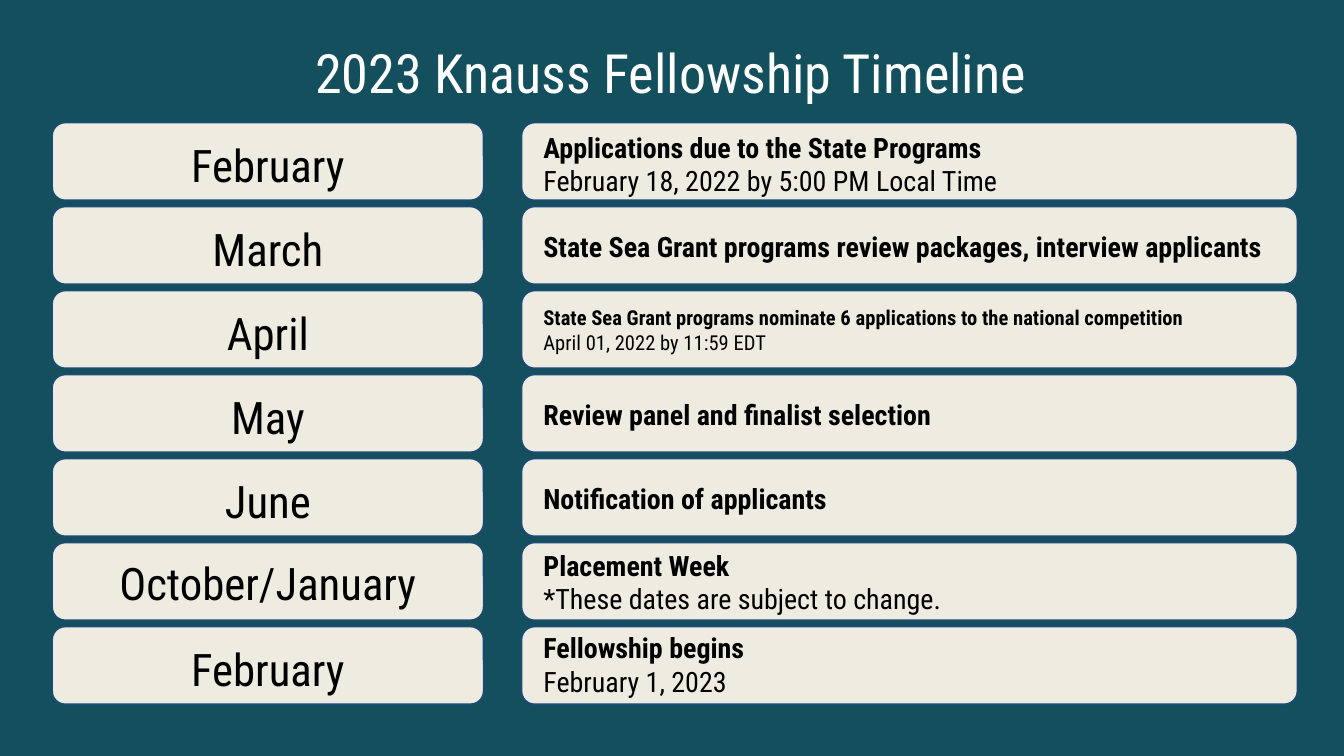
from pptx import Presentation
from pptx.dml.color import RGBColor
from pptx.enum.shapes import MSO_SHAPE
from pptx.enum.text import MSO_ANCHOR, MSO_AUTO_SIZE, PP_ALIGN
from pptx.util import Pt

ROUNDED = MSO_SHAPE.ROUNDED_RECTANGLE
TOP, MIDDLE = MSO_ANCHOR.TOP, MSO_ANCHOR.MIDDLE
LEFT, CENTER = PP_ALIGN.LEFT, PP_ALIGN.CENTER
NO_FIT = MSO_AUTO_SIZE.NONE

COLORS = {"background": "134F5C", "card": "EEECE1", "border": "1F497D",
          "title": "FFFFFF", "text": "000000"}
FONT = "Roboto Condensed"

# Row grid, in points
FIRST_TOP, ROW_STEP, CARD_HEIGHT = 65.75, 45, 41.5
MONTH_LEFT, MONTH_WIDTH = 28, 231
DETAIL_LEFT, DETAIL_WIDTH = 279.5, 415.5

# Month, detail lines (the first is bold), detail size, month and detail nudge
ROWS = [
    ("February", ["Applications due to the State Programs",
                  "February 18, 2022 by 5:00 PM Local Time"], 15, 0, 1),
    ("March", ["State Sea Grant programs review packages, interview applicants"],
     15, 0, 0),
    ("April", ["State Sea Grant programs nominate 6 applications to the national competition",
               "April 01, 2022 by 11:59 EDT"], 11, 0, 0),
    ("May", ["Review panel and finalist selection"], 15, 0, 0),
    ("June", ["Notification of applicants"], 15, 0, 0),
    ("October/January", ["Placement Week",
                         "*These dates are subject to change."], 15, -1, 0),
    ("February", ["Fellowship begins", "February 1, 2023"], 15, 0, -1),
]


class TimelineSlide:
    def __init__(self, presentation):
        self.slide = presentation.slides.add_slide(presentation.slide_layouts[5])
        self.paint(self.slide.background.fill, "background")

    def paint(self, fill, color):
        fill.solid()
        fill.fore_color.rgb = RGBColor.from_string(COLORS[color])

    def set_text(self, text_frame, lines, size, color, align, anchor, bold_first=False):
        frame_format = {"word_wrap": True, "auto_size": NO_FIT, "vertical_anchor": anchor}
        for side in ("left", "right", "top", "bottom"):
            frame_format[f"margin_{side}"] = Pt(7.2)
        for name, value in frame_format.items():
            setattr(text_frame, name, value)
        for index, line in enumerate(lines):
            paragraph = text_frame.add_paragraph() if index else text_frame.paragraphs[0]
            paragraph.alignment = align
            paragraph.space_before = Pt(0)
            run = paragraph.add_run()
            run.text = line
            run_format = {"name": FONT, "size": Pt(size), "bold": bold_first and index == 0}
            for name, value in run_format.items():
                setattr(run.font, name, value)
            run.font.color.rgb = RGBColor.from_string(COLORS[color])

    def title(self, text, left, top, width, height):
        shape = self.slide.shapes.title
        position = {"left": left, "top": top, "width": width, "height": height}
        for name, value in position.items():
            setattr(shape, name, Pt(value))
        self.set_text(shape.text_frame, [text], 29, "title", CENTER, TOP)

    def card(self, left, top, width):
        shape = self.slide.shapes.add_shape(
            ROUNDED, Pt(left), Pt(top), Pt(width), Pt(CARD_HEIGHT))
        shape.shadow.inherit = False
        self.paint(shape.fill, "card")
        self.paint(shape.line.fill, "border")
        shape.line.width = Pt(0.75)

    def label(self, lines, left, top, width, height, size, align, bold_first=False):
        box = self.slide.shapes.add_textbox(Pt(left), Pt(top), Pt(width), Pt(height))
        self.set_text(box.text_frame, lines, size, "text", align, MIDDLE, bold_first)


def main():
    presentation = Presentation()
    presentation.slide_width, presentation.slide_height = Pt(720), Pt(405)
    timeline = TimelineSlide(presentation)
    timeline.title("2023 Knauss Fellowship Timeline", 24, 13.75, 671, 45.5)

    # One month card and one detail card per row
    for index, (month, details, size, month_nudge, detail_nudge) in enumerate(ROWS):
        top = FIRST_TOP + index * ROW_STEP
        timeline.card(MONTH_LEFT, top, MONTH_WIDTH)
        timeline.card(DETAIL_LEFT, top, DETAIL_WIDTH)
        timeline.label([month], MONTH_LEFT, top + 10 + month_nudge,
                       MONTH_WIDTH, 24.5, 24, CENTER)
        timeline.label(details, DETAIL_LEFT + 4.5, top + 0.75 + detail_nudge,
                       405.5, 40.5, size, LEFT, bold_first=True)

    presentation.save("out.pptx")


if __name__ == "__main__":
    main()
